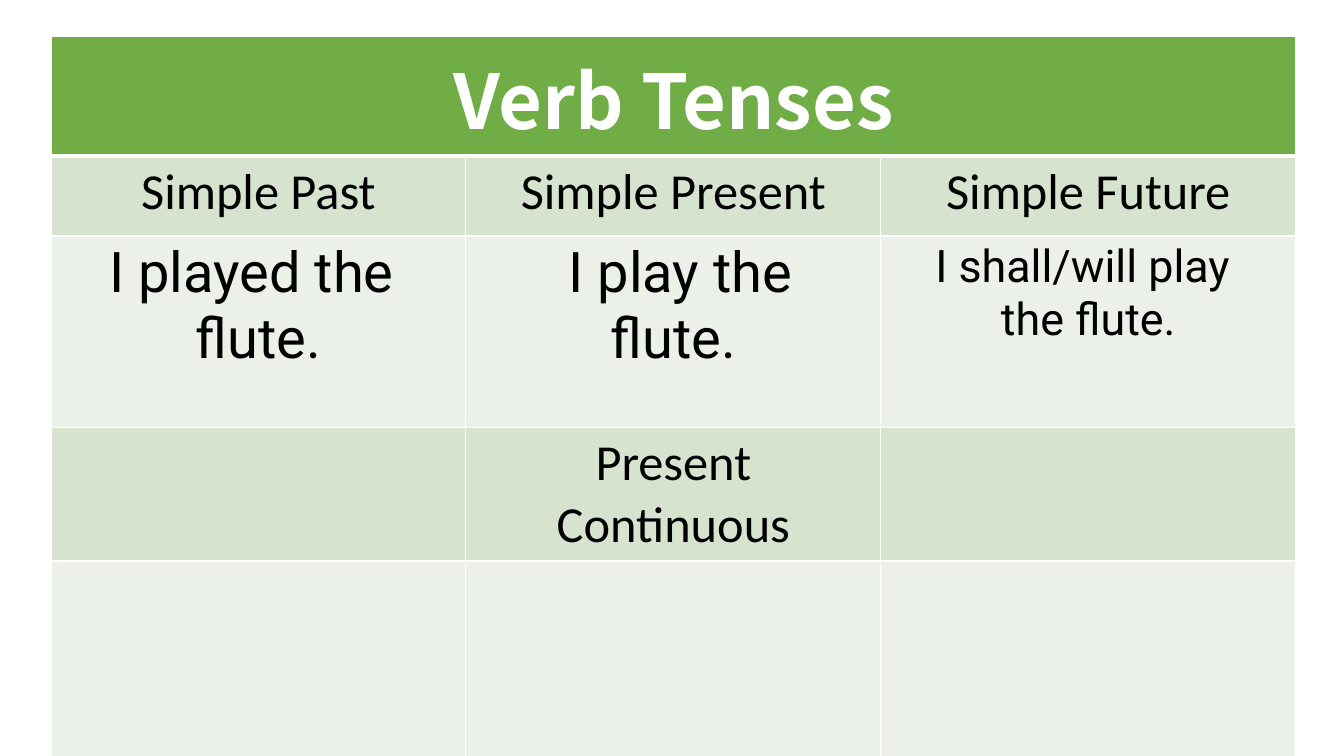
"""Build a slide with a table of English verb tenses."""
import pptx
import pptx.dml.color
import pptx.enum.text
import pptx.oxml
import pptx.oxml.ns
import pptx.util

Pt = pptx.util.Pt
COLORS = {
    "header": "70AD47",
    "label": "D5E3CF",
    "example": "EBF1E9",
    "border": "FFFFFF",
    "title": "FFFFFF",
    "text": "000000",
}
FORMATS = {
    "title": {"name": "Noto Sans CJK JP", "size": Pt(54), "bold": True},
    "label": {"name": "Calibri", "size": Pt(36), "bold": False},
    "example": {"name": "Roboto", "size": Pt(40), "bold": False},
    "long example": {"name": "Roboto", "size": Pt(32), "bold": False},
}
COLUMN_WIDTH = 296.4
ROW_HEIGHTS = [81.4, 56.9, 136.8, 62.6, 150.5]
ROW_FILLS = ["header", "label", "example", "label", "example"]
CONTENT = [
    (0, 0, "title", "Verb Tenses"),
    (1, 0, "label", "Simple Past"),
    (1, 1, "label", "Simple Present"),
    (1, 2, "label", "Simple Future"),
    (2, 0, "example", "I played the \nflute."),
    (2, 1, "example", " I play the\nflute."),
    (2, 2, "long example", "I shall/will play \nthe flute."),
    (3, 1, "label", "Present Continuous"),
]


def rgb(color):
    return pptx.dml.color.RGBColor.from_string(COLORS[color])


def set_borders(cell, widths):
    properties = cell._tc.get_or_add_tcPr()
    for side, width in zip("LRTB", widths):
        properties.append(pptx.oxml.parse_xml(
            f'<a:ln{side} {pptx.oxml.ns.nsdecls("a")} w="{Pt(width)}">'
            f'<a:solidFill><a:srgbClr val="{COLORS["border"]}"/></a:solidFill>'
            f'</a:ln{side}>'))


def add_tense_table(slide):
    tenses = slide.shapes.add_table(
        len(ROW_HEIGHTS), 3, Pt(36.4), Pt(26.2),
        Pt(3 * COLUMN_WIDTH), Pt(sum(ROW_HEIGHTS))).table
    for column in tenses.columns:
        column.width = Pt(COLUMN_WIDTH)
    for index, (height, fill) in enumerate(zip(ROW_HEIGHTS, ROW_FILLS)):
        tenses.rows[index].height = Pt(height)
        top = 3 if index == 1 else 1
        bottom = 3 if index == 0 else 1
        for cell in tenses.rows[index].cells:
            set_borders(cell, (1, 1, top, bottom))
            cell.fill.solid()
            cell.fill.fore_color.rgb = rgb(fill)
    tenses.cell(0, 0).merge(tenses.cell(0, 2))
    return tenses


def write_cell(cell, style, wording):
    cell.text = wording
    for line in cell.text_frame.paragraphs:
        line.alignment = pptx.enum.text.PP_ALIGN.CENTER
        font = line.runs[0].font
        for attribute, value in FORMATS[style].items():
            setattr(font, attribute, value)
        font.color.rgb = rgb("title" if style == "title" else "text")


def main():
    presentation = pptx.Presentation()
    presentation.slide_width = Pt(960)
    presentation.slide_height = Pt(540)
    slide = presentation.slides.add_slide(presentation.slide_layouts[6])
    tenses = add_tense_table(slide)
    for row, column, style, wording in CONTENT:
        write_cell(tenses.cell(row, column), style, wording)
    presentation.save("out.pptx")


if __name__ == "__main__":
    main()
